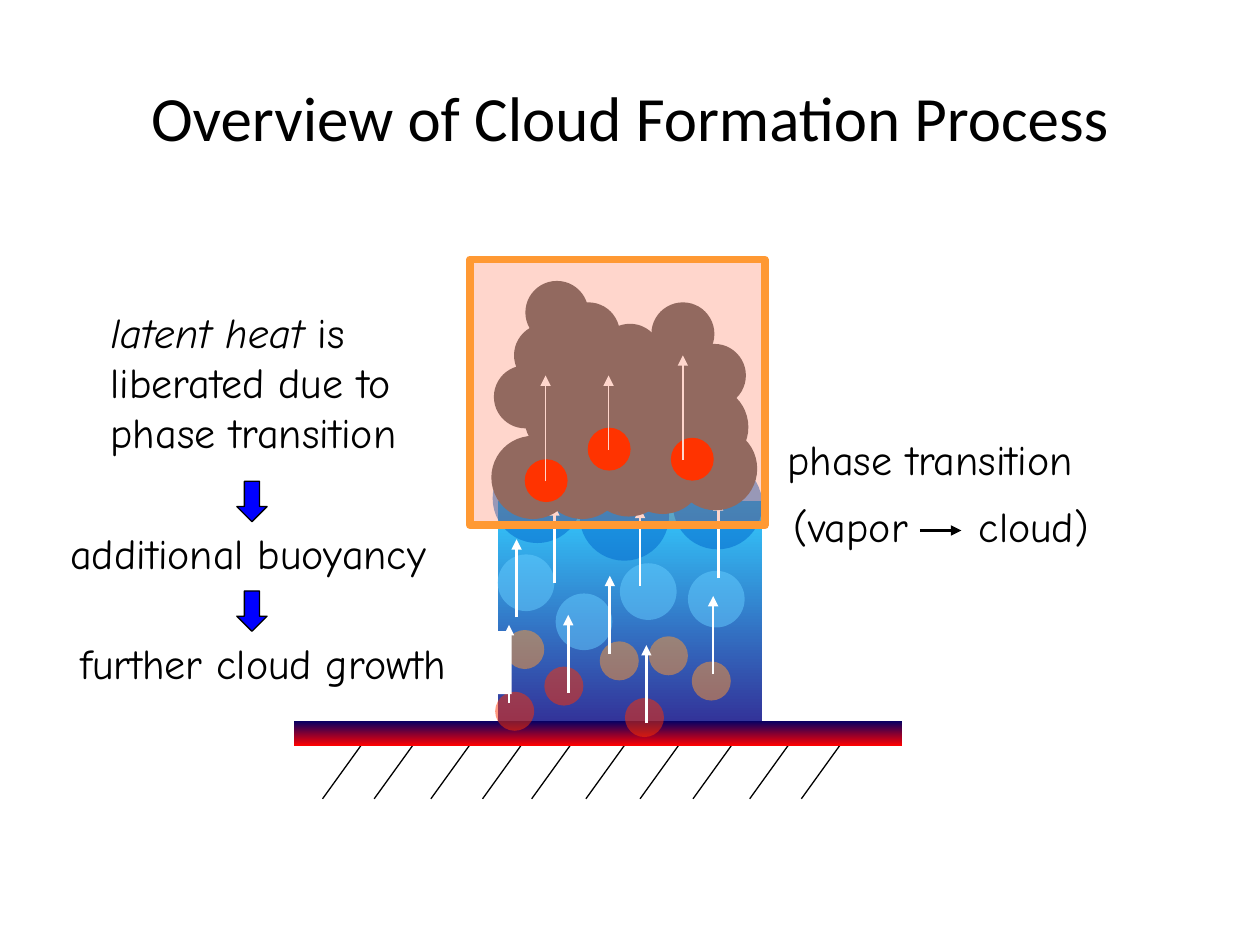
from pptx import Presentation
from pptx.dml.color import RGBColor
from pptx.enum.shapes import MSO_CONNECTOR, MSO_SHAPE
from pptx.enum.text import MSO_ANCHOR, MSO_AUTO_SIZE, PP_ALIGN
from pptx.oxml.ns import qn
from pptx.util import Inches, Pt
from lxml.etree import SubElement

BLACK = RGBColor(0x00, 0x00, 0x00)
WHITE = RGBColor(0xFF, 0xFF, 0xFF)
GRAY = RGBColor(0x77, 0x77, 0x77)
RED = RGBColor(0xFF, 0x33, 0x00)
ORANGE = RGBColor(0xFF, 0x99, 0x33)
BLUE = RGBColor(0x00, 0x00, 0xFF)
DEEP_BLUE = RGBColor(0x00, 0x66, 0xCC)
PALE_BLUE = RGBColor(0x66, 0xCC, 0xFF)
CYAN = RGBColor(0x33, 0xCC, 0xFF)
INDIGO = RGBColor(0x33, 0x33, 0x99)
NAVY = RGBColor(0x00, 0x00, 0x66)
PURE_RED = RGBColor(0xFF, 0x00, 0x00)

TITLE = "Overview of Cloud Formation Process"
NOTES = [
    (6.15, 3.39, 2.73, 0.5, [[("phase transition", False)]]),
    (0.46, 4.14, 3.26, 0.5, [[("additional buoyancy", False)]]),
    (0.54, 5.01, 3.52, 0.5, [[("further cloud growth", False)]]),
    (0.78, 2.38, 2.74, 1.31, [[("latent heat ", True), ("is", False)],
                              [("liberated due to", False)],
                              [("phase transition", False)]]),
]
VAPOR_NOTE = (6.2, 3.92, 2.62, 0.51, [[("(vapor\tcloud)", False)]])
VAPOR_TAB = 1.47
STEP_ARROWS = [(1.88, 3.82), (1.88, 4.69)]

CLOUD_TOP = [(3.92, 2.9), (4.08, 2.57), (4.42, 2.4), (4.75, 2.57), (5.17, 2.4),
             (5.42, 2.73), (5.33, 3.15), (4.17, 3.32), (4.17, 2.23), (4.42, 3.32)]
CLOUD_BODY = [(3.9, 3.46), (4.29, 3.46), (5.35, 3.39), (4.66, 3.44), (4.93, 3.42),
              (4.16, 2.98), (4.6, 3.08), (4.99, 3.06), (4.62, 2.84), (5.28, 3.06),
              (4.95, 2.64)]
PARCELS = [
    (0.31, RED, [(3.93, 5.49), (4.32, 5.29), (4.96, 5.54)]),
    (0.31, ORANGE, [(4.01, 5), (4.76, 5.09), (5.15, 5.05), (5.49, 5.25)]),
    (0.71, DEEP_BLUE, [(3.91, 3.6), (4.6, 3.74), (5.34, 3.65)]),
    (0.45, PALE_BLUE, [(3.95, 4.4), (4.41, 4.71), (4.92, 4.47), (5.46, 4.53)]),
]
UPDRAFTS = [(5.13, 5.74), (4.04, 5.58), (4.51, 5.5), (5.66, 5.35), (4.84, 5.19),
            (4.4, 4.63), (4.1, 4.9), (5.08, 4.65), (5.7, 4.59)]
UPDRAFT_RISE = 0.62
HEAT_SOURCES = [(4.17, 3.65), (4.67, 3.4), (5.33, 3.48)]
HEAT_ARROWS = [(4.33, 3.82, 2.98), (4.83, 3.57, 2.98), (5.42, 3.65, 2.82)]
HATCH_TOPS = [2.87, 3.28, 3.73, 4.14, 4.53, 4.96, 5.39, 5.81, 6.26, 6.67]
HATCH_Y, HATCH_DX, HATCH_DY = 5.91, 0.31, 0.43

prs = Presentation()
prs.slide_width, prs.slide_height = Inches(10), Inches(7.5)
s = prs.slides.add_slide(prs.slide_layouts[5])


def add_shape(kind, x, y, w, h, fill, line=None, weight=0.75, alpha=None):
    sp = s.shapes.add_shape(kind, Inches(x), Inches(y), Inches(w), Inches(h))
    sp.shadow.inherit = False
    if isinstance(fill, tuple) and not isinstance(fill, RGBColor):
        sp.fill.gradient()
        sp.fill.gradient_angle = 270
        for stop, color, position in zip(sp.fill.gradient_stops, fill, (0, 1)):
            stop.color.rgb = color
            stop.position = position
    else:
        sp.fill.solid()
        sp.fill.fore_color.rgb = fill
    if alpha:
        color = sp._element.spPr.find(qn("a:solidFill"))[0]
        SubElement(color, qn("a:alpha"), val=str(alpha * 1000))
    if line is None:
        sp.line.fill.background()
    else:
        sp.line.color.rgb = line
        sp.line.width = Pt(weight)
    return sp


def add_circles(points, size, fill, **style):
    for x, y in points:
        add_shape(MSO_SHAPE.OVAL, x, y, size, size, fill, **style)


def add_line(x1, y1, x2, y2, color, weight, arrow=True):
    c = s.shapes.add_connector(MSO_CONNECTOR.STRAIGHT, Inches(x1), Inches(y1),
                               Inches(x2), Inches(y2))
    c.line.color.rgb = color
    c.line.width = Pt(weight)
    if arrow:
        SubElement(c.line._get_or_add_ln(), qn("a:tailEnd"), type="triangle")
    SubElement(c._element.spPr, qn("a:effectLst"))


def add_note(x, y, w, h, lines, fill=None):
    sp = s.shapes.add_textbox(Inches(x), Inches(y), Inches(w), Inches(h))
    if fill is not None:
        sp.fill.solid()
        sp.fill.fore_color.rgb = fill
    tf = sp.text_frame
    tf.word_wrap = False
    tf.auto_size = MSO_AUTO_SIZE.SHAPE_TO_FIT_TEXT
    for i, runs in enumerate(lines):
        p = tf.add_paragraph() if i else tf.paragraphs[0]
        for text, italic in runs:
            r = p.add_run()
            r.text = text
            r.font.name = "Comic Neue"
            r.font.size = Pt(24)
            r.font.italic = italic
            r.font.color.rgb = BLACK
    return tf


add_circles(CLOUD_TOP, 0.5, GRAY)
add_shape(MSO_SHAPE.RECTANGLE, 4.33, 2.82, 1.33, 1, GRAY)
add_circles([(5.42, 3.48)], 0.42, GRAY)

for x in HATCH_TOPS:
    add_line(x, HATCH_Y, x - HATCH_DX, HATCH_Y + HATCH_DY, BLACK, 0.75, arrow=False)
add_shape(MSO_SHAPE.RECTANGLE, 3.95, 3.98, 2.1, 1.75, (CYAN, INDIGO))
add_shape(MSO_SHAPE.RECTANGLE, 2.33, 5.72, 4.83, 0.2, (NAVY, PURE_RED))

for size, color, points in PARCELS:
    add_circles(points, size, color, alpha=50)
for x, y in UPDRAFTS:
    add_line(x, y, x, y - UPDRAFT_RISE, WHITE, 1.5)

add_circles(CLOUD_BODY, 0.66, GRAY)
add_circles(HEAT_SOURCES, 0.33, RED, line=RED)
for x, bottom, top in HEAT_ARROWS:
    add_line(x, bottom, x, top, WHITE, 0.75)

title = s.shapes.title
title.left, title.top = Inches(0.5), Inches(0.3)
title.width, title.height = Inches(9), Inches(1.25)
tf = title.text_frame
tf.text = TITLE
tf.vertical_anchor = MSO_ANCHOR.MIDDLE
p = tf.paragraphs[0]
p.alignment = PP_ALIGN.CENTER
r = p.runs[0]
r.font.name = "Calibri"
r.font.size = Pt(36)
r.font.color.rgb = BLACK

for note in NOTES:
    add_note(*note, fill=WHITE)
for x, y in STEP_ARROWS:
    sp = add_shape(MSO_SHAPE.DOWN_ARROW, x, y, 0.24, 0.32, BLUE, line=BLACK)
    sp.adjustments[0] = sp.adjustments[1] = 0.5

tf = add_note(*VAPOR_NOTE)
tabs = SubElement(tf.paragraphs[0]._p.get_or_add_pPr(), qn("a:tabLst"))
SubElement(tabs, qn("a:tab"), pos=str(Inches(VAPOR_TAB)), algn="l")
add_line(7.3, 4.21, 7.63, 4.21, BLACK, 1.5)

add_shape(MSO_SHAPE.RECTANGLE, 3.73, 2.06, 2.34, 2.11, RED, line=ORANGE, weight=4.5, alpha=20)

prs.save("out.pptx")
